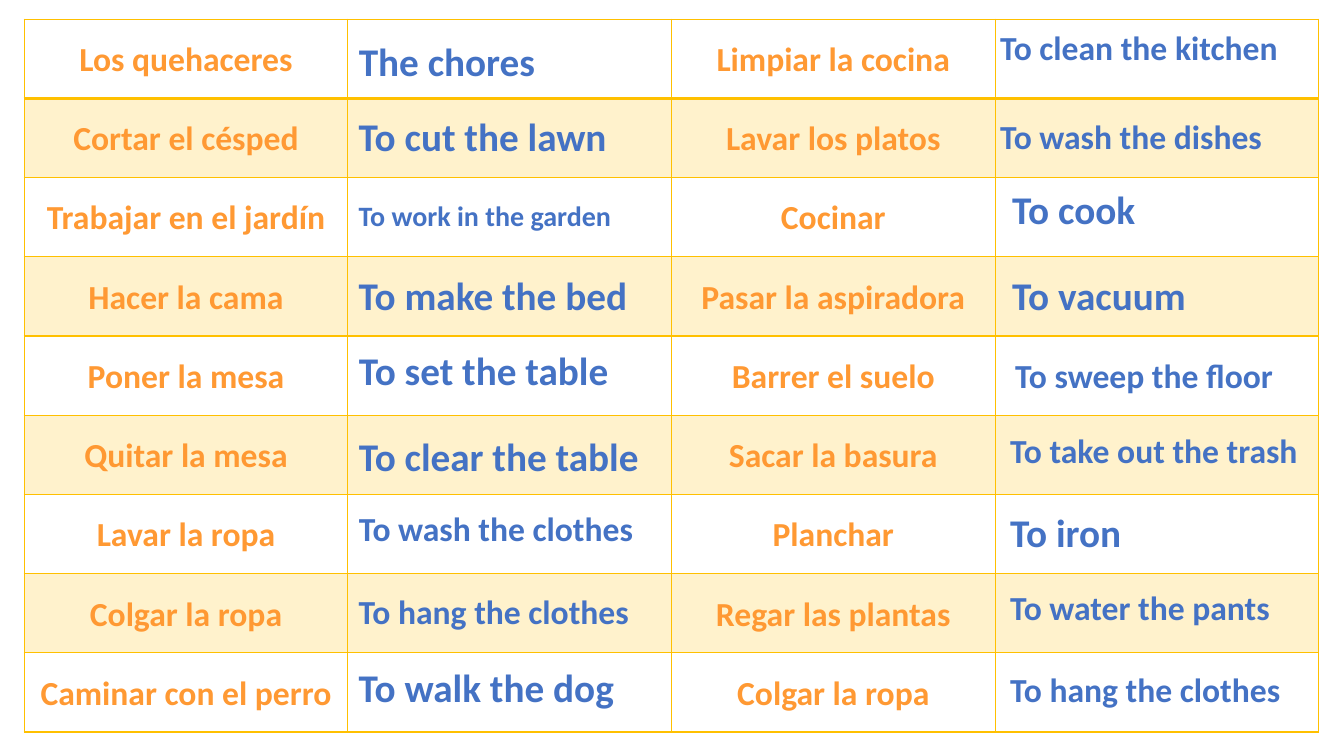
from dataclasses import dataclass

from lxml.etree import SubElement
from pptx import Presentation
from pptx.dml.color import RGBColor
from pptx.enum.text import MSO_AUTO_SIZE as AutoSize, PP_ALIGN as Align
from pptx.oxml import parse_xml
from pptx.oxml.ns import nsdecls, qn
from pptx.util import Inches, Pt

GOLD = RGBColor(0xFF, 0xC0, 0x00)
ORANGE = RGBColor(0xFF, 0x99, 0x33)
BLUE = RGBColor(0x44, 0x72, 0xC4)

TABLE_LEFT, TABLE_TOP = 0.24, 0.19
COLUMN_WIDTH, ROW_HEIGHT = 3.21, 0.786
LEFT_MEANINGS = 3.46


@dataclass
class Chore:
    """A Spanish phrase and the place, width and size of its English meaning."""
    spanish: str
    english: str
    left: float
    top: float
    width: float
    size: int = 28


LEFT_CHORES = [
    Chore("Los quehaceres", "The chores", LEFT_MEANINGS, 0.32, 2.51),
    Chore("Cortar el césped", "To cut the lawn", LEFT_MEANINGS, 1.07, 2.93),
    Chore("Trabajar en el jardín", "To work in the garden", LEFT_MEANINGS, 1.92, 2.93, 20),
    Chore("Hacer la cama", "To make the bed", LEFT_MEANINGS, 2.64, 2.93),
    Chore("Poner la mesa", "To set the table", LEFT_MEANINGS, 3.39, 2.82),
    Chore("Quitar la mesa", "To clear the table", LEFT_MEANINGS, 4.24, 3.11),
    Chore("Lavar la ropa", "To wash the clothes", LEFT_MEANINGS, 4.99, 3.11, 24),
    Chore("Colgar la ropa", "To hang the clothes", LEFT_MEANINGS, 5.81, 3.53, 24),
    Chore("Caminar con el perro", "To walk the dog", LEFT_MEANINGS, 6.53, 2.93),
]
RIGHT_CHORES = [
    Chore("Limpiar la cocina", "To clean the kitchen", 9.82, 0.22, 3.21, 24),
    Chore("Lavar los platos", "To wash the dishes", 9.82, 1.1, 3.31, 24),
    Chore("Cocinar", "To cook", 9.94, 1.79, 2.51),
    Chore("Pasar la aspiradora", "To vacuum", 9.94, 2.64, 2.51),
    Chore("Barrer el suelo", "To sweep the floor", 9.97, 3.47, 3.06, 24),
    Chore("Sacar la basura", "To take out the trash", 9.92, 4.22, 3.21, 24),
    Chore("Planchar", "To iron", 9.92, 4.99, 2.51),
    Chore("Regar las plantas", "To water the pants", 9.92, 5.77, 2.96, 24),
    Chore("Colgar la ropa", "To hang the clothes", 9.92, 6.59, 3.21, 24),
]


def write(para, text: str, size: int, color: RGBColor) -> None:
    span = para.add_run()
    span.text = text
    for name, value in {"name": "Calibri", "size": Pt(size), "bold": True}.items():
        setattr(span.font, name, value)
    span.font.color.rgb = color


def style_cell(cell, row: int) -> None:
    """Give the cell gold borders and, on every second row, a pale gold band."""
    if row % 2:
        cell.fill.solid()
        cell.fill.fore_color.rgb = GOLD
        color = cell._tc.tcPr.find(".//" + qn("a:srgbClr"))
        SubElement(color, qn("a:alpha"), val="20000")
    else:
        cell.fill.background()
    properties = cell._tc.get_or_add_tcPr()
    for position, side in enumerate("LRTB"):
        width = Pt(2 if row == 0 and side == "B" else 1)
        border = parse_xml(
            f'<a:ln{side} {nsdecls("a")} w="{width}"><a:solidFill>'
            f'<a:srgbClr val="{GOLD}"/></a:solidFill></a:ln{side}>')
        properties.insert(position, border)


def write_phrase(cell, phrase: str) -> None:
    margins = {"margin_left": 0.07, "margin_right": 0.07,
               "margin_top": 0, "margin_bottom": 0}
    for name, value in margins.items():
        setattr(cell, name, Inches(value))
    para = cell.text_frame.paragraphs[0]
    para.alignment = Align.CENTER
    para.line_spacing = 1.5
    write(para, phrase, 24, ORANGE)


def add_chore_table(page) -> None:
    count = len(LEFT_CHORES)
    table = page.shapes.add_table(
        count, 4, Inches(TABLE_LEFT), Inches(TABLE_TOP),
        Inches(4 * COLUMN_WIDTH), Inches(count * ROW_HEIGHT)).table
    table.first_row = table.horz_banding = False
    for column in table.columns:
        column.width = Inches(COLUMN_WIDTH)
    for row, pair in enumerate(zip(LEFT_CHORES, RIGHT_CHORES)):
        table.rows[row].height = Inches(ROW_HEIGHT)
        for column in range(4):
            style_cell(table.cell(row, column), row)
        for side, chore in enumerate(pair):
            write_phrase(table.cell(row, 2 * side), chore.spanish)


def add_meaning(page, chore: Chore) -> None:
    height = {20: 0.44, 24: 0.5, 28: 0.57}[chore.size]
    box = page.shapes.add_textbox(
        Inches(chore.left), Inches(chore.top), Inches(chore.width), Inches(height))
    box.text_frame.word_wrap = True
    box.text_frame.auto_size = AutoSize.SHAPE_TO_FIT_TEXT
    write(box.text_frame.paragraphs[0], chore.english, chore.size, BLUE)


def main() -> None:
    deck = Presentation()
    deck.slide_width, deck.slide_height = Inches(13.33), Inches(7.5)
    page = deck.slides.add_slide(deck.slide_layouts[6])
    add_chore_table(page)
    for chore in LEFT_CHORES + RIGHT_CHORES:
        add_meaning(page, chore)
    deck.save("out.pptx")


if __name__ == "__main__":
    main()
